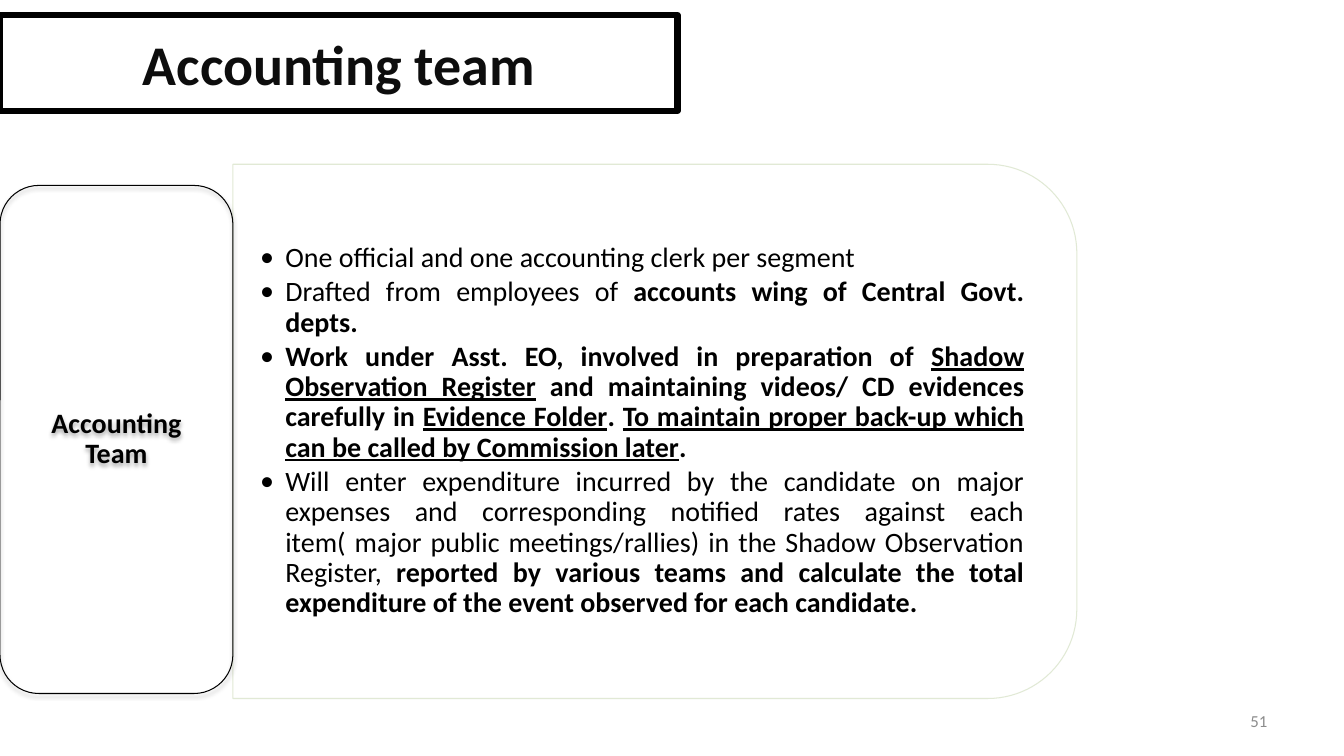
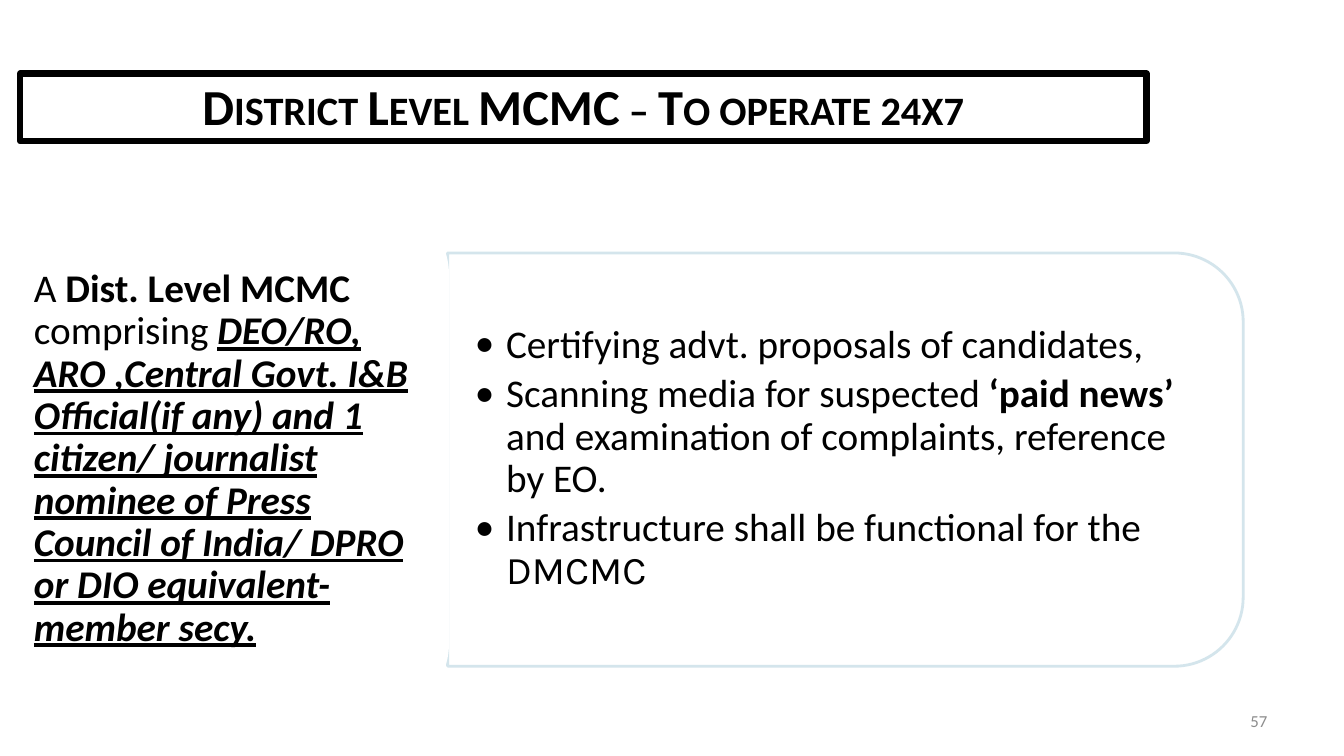
from lxml import etree
from pptx import Presentation
from pptx import util as u
from pptx.dml.color import RGBColor
from pptx.enum import shapes, text
from pptx.oxml.ns import qn

PX = 9144  # EMU in one px, 100 px to the inch
SLIDE_SIZE = (1333, 750)
NUMBER_BOX = (956, 695, 311, 40)
TITLE_LINE = 4.5
BODY_INSETS = (27, 14, 27, 14)

BLACK = RGBColor(0x00, 0x00, 0x00)
WHITE = RGBColor(0xFF, 0xFF, 0xFF)
INK = RGBColor(0x0D, 0x0D, 0x0D)
GREY = RGBColor(0x8C, 0x8C, 0x8C)
PALE_GREEN = RGBColor(0xDE, 0xE7, 0xD1)
PALE_BLUE = RGBColor(0xD0, 0xE3, 0xEA)

FONT = "Calibri"
PLAIN = {}
BOLD = {"bold": True}
KEY = {"bold": True, "underline": True}
KEY_ITALIC = {**KEY, "italic": True}
KARLA = {"name": "Karla"}
ALIGN = text.PP_ALIGN
ANCHOR = text.MSO_ANCHOR

SLIDES = [
    {
        "number": "51",
        "title": {"text": "Accounting team", "box": (0, 15, 672, 95), "size": 40,
                  "color": INK, "anchor": ANCHOR.MIDDLE, "small_caps": False},
        "panel": {"box": (231, 163, 837, 530), "line": (PALE_GREEN, 0.75)},
        "body": {"box": (231, 188, 812, 479), "size": 20, "align": ALIGN.JUSTIFY,
                 "indent": 25, "after": 3},
        "bullets": [
            [("One official and one accounting clerk per segment", PLAIN)],
            [("Drafted from employees of ", PLAIN),
             ("accounts wing of Central Govt. depts.", BOLD)],
            [("Work under Asst. EO, involved in preparation of ", BOLD),
             ("Shadow Observation Register", KEY),
             (" and maintaining videos/ CD evidences carefully in ", BOLD),
             ("Evidence Folder", KEY),
             (". ", BOLD),
             ("To maintain proper back-up which can be called by Commission later", KEY),
             (".", BOLD)],
            [("Will enter expenditure incurred by the candidate on major expenses and "
              "corresponding notified rates against each item( major public "
              "meetings/rallies) in the Shadow Observation Register, ", PLAIN),
             ("reported by various teams and calculate the total expenditure of the "
              "event observed for each candidate.", BOLD)],
        ],
        "side": {"box": (0, 184, 231, 504), "insets": (8, 4, 8, 4), "size": 20,
                 "align": ALIGN.CENTER, "line": (BLACK, 0.75), "shadow": True},
        "side_text": [("Accounting Team", BOLD)],
    },
    {
        "number": "57",
        "title": {"text": "District Level MCMC – To operate 24x7",
                  "box": (20, 73, 1117, 67), "size": 36,
                  "color": BLACK, "anchor": ANCHOR.BOTTOM, "small_caps": True},
        "panel": {"box": (444, 251, 789, 410), "line": (PALE_BLUE, 2)},
        "body": {"box": (444, 270, 769, 370), "size": 28, "align": ALIGN.LEFT,
                 "indent": 31, "after": 5},
        "bullets": [
            [("Certifying advt. proposals of candidates,", PLAIN)],
            [("Scanning media for suspected ", PLAIN),
             ("‘paid news’ ", BOLD),
             ("and examination of complaints, reference by EO.", PLAIN)],
            [("Infrastructure shall be functional for the ", PLAIN),
             ("DMCMC", KARLA)],
        ],
        "side": {"box": (0, 199, 444, 513), "insets": (12, 6, 12, 6), "size": 28,
                 "align": ALIGN.LEFT, "line": (WHITE, 2), "shadow": False},
        "side_text": [
            ("A", PLAIN),
            (" Dist. Level MCMC ", BOLD),
            ("comprising ", PLAIN),
            ("DEO/RO, ARO ,Central Govt. I&B Official(if any) and 1 citizen/ journalist "
             "nominee of Press Council of India/ DPRO or DIO equivalent- member secy.",
             KEY_ITALIC),
        ],
    },
]


def emu(box):
    return [round(length * PX) for length in box]


def place(shape, box):
    shape.left, shape.top, shape.width, shape.height = emu(box)


def set_line(shape, color, width):
    shape.line.color.rgb = color
    shape.line.width = u.Pt(width)


def set_frame(shape, anchor, insets=(10, 5, 10, 5)):
    frame = shape.text_frame
    values = dict(zip(("margin_left", "margin_top", "margin_right", "margin_bottom"),
                      emu(insets)))
    values.update(word_wrap=True, auto_size=text.MSO_AUTO_SIZE.NONE, vertical_anchor=anchor)
    for name, value in values.items():
        setattr(frame, name, value)
    return frame


def write(paragraph, runs, size, align, color=BLACK, spacing=1.0, after=0):
    values = {"alignment": align, "line_spacing": spacing,
              "space_before": u.Pt(0), "space_after": u.Pt(after)}
    for name, value in values.items():
        setattr(paragraph, name, value)
    for words, style in runs:
        run = paragraph.add_run()
        run.text = words
        values = {"name": FONT, "size": u.Pt(size), "bold": False, **style}
        for name, value in values.items():
            setattr(run.font, name, value)
        run.font.color.rgb = color


def add_bullet(paragraph, indent):
    properties = paragraph._p.get_or_add_pPr()
    properties.set("marL", str(indent * PX))
    properties.set("indent", str(-indent * PX))
    etree.SubElement(properties, qn("a:buFont")).set("typeface", FONT)
    etree.SubElement(properties, qn("a:buChar")).set("char", "•")


def add_soft_shadow(shape):
    effects = shape._element.spPr.find(qn("a:effectLst"))
    shadow = etree.SubElement(effects, qn("a:outerShdw"), blurRad=str(u.Pt(3.1)),
                              dist=str(u.Pt(1.8)), dir="5400000", rotWithShape="0")
    color = etree.SubElement(shadow, qn("a:srgbClr"), val=str(BLACK))
    etree.SubElement(color, qn("a:alpha"), val="35000")


def add_outline(slide, kind, box, line):
    shape = slide.shapes.add_shape(kind, *emu(box))
    shape.shadow.inherit = False
    shape.fill.background()
    set_line(shape, *line)
    return shape


def add_panel(slide, box, line):
    """Outline with both right corners rounded: a top-rounded shape turned by 90 degrees."""
    left, top, width, height = box
    shift = (width - height) / 2
    panel = add_outline(slide, shapes.MSO_SHAPE.ROUND_2_SAME_RECTANGLE,
                        (left + shift, top - shift, height, width), line)
    panel.rotation = 90
    color = panel._element.spPr.find(".//" + qn("a:ln")).find(".//" + qn("a:srgbClr"))
    etree.SubElement(color, qn("a:alpha"), val="90000")


def fill_title(title, content):
    place(title, content["box"])
    title.fill.solid()
    title.fill.fore_color.rgb = WHITE
    set_line(title, BLACK, TITLE_LINE)
    paragraph = set_frame(title, content["anchor"]).paragraphs[0]
    write(paragraph, [(content["text"], BOLD)], content["size"], ALIGN.CENTER,
          content["color"])
    if content["small_caps"]:
        paragraph.runs[0].font._element.set("cap", "small")


def fill_body(body, content, bullets):
    place(body, content["box"])
    frame = set_frame(body, ANCHOR.MIDDLE, BODY_INSETS)
    for index, runs in enumerate(bullets):
        paragraph = frame.add_paragraph() if index else frame.paragraphs[0]
        add_bullet(paragraph, content["indent"])
        write(paragraph, runs, content["size"], content["align"],
              spacing=0.9, after=content["after"])


def add_side(slide, content, runs):
    side = add_outline(slide, shapes.MSO_SHAPE.ROUNDED_RECTANGLE,
                       content["box"], content["line"])
    if content["shadow"]:
        add_soft_shadow(side)
    frame = set_frame(side, ANCHOR.MIDDLE, content["insets"])
    write(frame.paragraphs[0], runs, content["size"], content["align"], spacing=0.9)


def add_number(slide, number):
    box = slide.shapes.add_textbox(*emu(NUMBER_BOX))
    frame = set_frame(box, ANCHOR.MIDDLE)
    write(frame.paragraphs[0], [(number, PLAIN)], 12, ALIGN.RIGHT, GREY)


def main():
    presentation = Presentation()
    presentation.slide_width, presentation.slide_height = emu(SLIDE_SIZE)
    for content in SLIDES:
        slide = presentation.slides.add_slide(presentation.slide_layouts[1])
        fill_title(slide.shapes.title, content["title"])
        fill_body(slide.placeholders[1], content["body"], content["bullets"])
        add_panel(slide, **content["panel"])
        add_side(slide, content["side"], content["side_text"])
        add_number(slide, content["number"])
    presentation.save("out.pptx")


if __name__ == "__main__":
    main()
